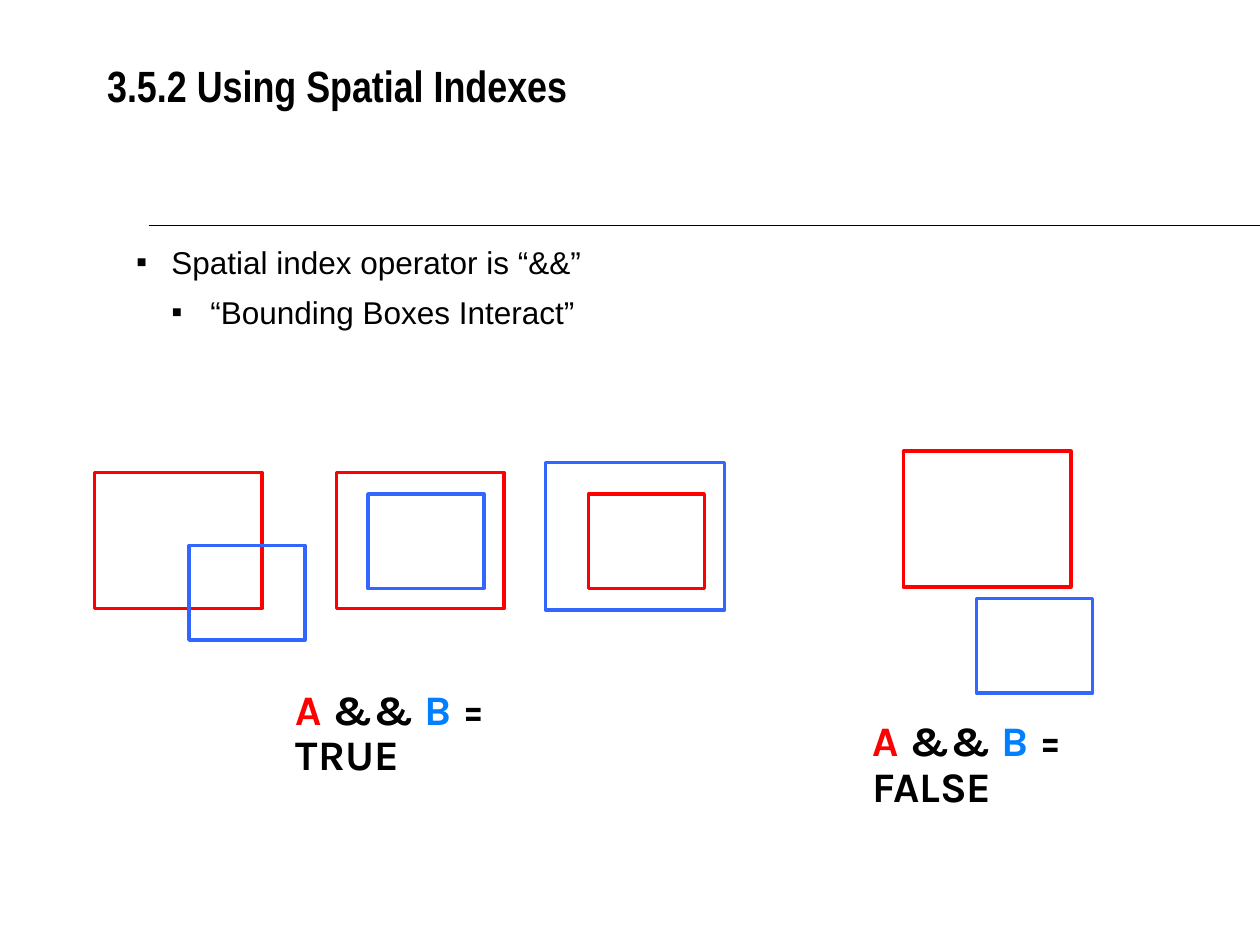
from lxml.etree import SubElement as Sub
from pptx import Presentation as Deck
from pptx.dml.color import RGBColor as Rgb
from pptx.enum.shapes import MSO_CONNECTOR as Conn, MSO_SHAPE as Kind
from pptx.enum.text import MSO_ANCHOR as Anchor, MSO_AUTO_SIZE as Fit, PP_ALIGN as Align
from pptx.oxml.ns import qn
from pptx.util import Inches, Pt

BLACK = Rgb(0, 0, 0)
RED = Rgb(0xFF, 0, 0)
BLUE = Rgb(0x33, 0x66, 0xFF)
SKY = Rgb(0, 0x80, 0xFF)

HEAD = {"name": "Arial Narrow", "size": Pt(25), "bold": True}
BODY = {"name": "Arial", "size": Pt(18), "bold": False}
LABEL = {"name": "Karla", "size": Pt(24), "bold": True}
FRAME = {"word_wrap": True, "auto_size": Fit.NONE, "vertical_anchor": Anchor.TOP}

BIG = (1.33, 1.08)
SMALL = (0.92, 0.75)
OUTER = (1.42, 1.17)


def apply(item, look):
    for key, value in look.items():
        setattr(item, key, value)


def place(shape, box):
    names = ("left", "top", "width", "height")
    apply(shape, dict(zip(names, map(Inches, box))))


def write(para, text, look, color=BLACK):
    run = para.add_run()
    run.text = text
    apply(run.font, look)
    run.font.color.rgb = color


def add_title(slide, box, text):
    title = slide.shapes.title
    place(title, box)
    apply(title.text_frame, FRAME)
    para = title.text_frame.paragraphs[0]
    para.alignment = Align.LEFT
    write(para, text, HEAD)


def add_rule(slide, box):
    left, top, width = box
    rule = slide.shapes.add_connector(
        Conn.STRAIGHT, Inches(left), Inches(top), Inches(left + width), Inches(top))
    rule.line.color.rgb = BLACK
    rule.line.width = Pt(1)
    Sub(rule._element.spPr, qn("a:effectLst"))


def add_list(slide, box, items):
    body = slide.placeholders[1]
    place(body, box)
    frame = body.text_frame
    apply(frame, FRAME | {"margin_left": 0})
    for level, (text, margin, hang) in enumerate(items):
        para = frame.add_paragraph() if level else frame.paragraphs[0]
        props = para._p.get_or_add_pPr()
        props.set("marL", str(Inches(margin)))
        props.set("indent", str(Inches(-hang)))
        Sub(props, qn("a:buFont"), typeface="Arial")
        Sub(props, qn("a:buChar"), char="▪")
        apply(para, {"level": level, "line_spacing": Pt(25),
                     "space_before": Pt(3.6 if level else 0),
                     "alignment": Align.LEFT})
        write(para, text, BODY)


def add_pair(slide, left, top, parts):
    for color, (x, y), size in parts:
        rect = slide.shapes.add_shape(Kind.RECTANGLE, 0, 0, 0, 0)
        place(rect, (left + x, top + y, *size))
        rect.shadow.inherit = False
        rect.fill.background()
        rect.line.color.rgb = color
        rect.line.width = Pt(2)


def add_label(slide, box, result):
    label = slide.shapes.add_textbox(*map(Inches, box))
    apply(label.text_frame, FRAME)
    para = label.text_frame.paragraphs[0]
    para.line_spacing = 0.9
    parts = (("A", RED), (" && ", BLACK), ("B", SKY), (f" = {result}", BLACK))
    for text, color in parts:
        write(para, text, LABEL, color)


def main():
    deck = Deck()
    deck.slide_width, deck.slide_height = Inches(10), Inches(7.5)
    slide = deck.slides.add_slide(deck.slide_layouts[1])
    add_rule(slide, (1.18, 1.79, 8.82))
    add_title(slide, (0.75, 0.42, 8.5, 1.08), "3.5.2 Using Spatial Indexes")
    add_list(slide, (1.08, 1.83, 8.17, 1.83), (
        ("Spatial index operator is “&&”", 0.28, 0.28),
        ("“Bounding Boxes Interact”", 0.59, 0.31)))
    pairs = (
        (2.67, 3.75, ((RED, (0, 0), BIG), (BLUE, (0.25, 0.17), SMALL))),
        (4.33, 3.67, ((RED, (0.34, 0.25), SMALL), (BLUE, (0, 0), OUTER))),
        (7.17, 3.58, ((RED, (0, 0), BIG), (BLUE, (0.58, 1.17), SMALL))),
        (0.75, 3.75, ((RED, (0, 0), BIG), (BLUE, (0.75, 0.58), SMALL))),
    )
    for left, top, parts in pairs:
        add_pair(slide, left, top, parts)
    add_label(slide, (2.25, 5.42, 2.5, 0.46), "TRUE")
    add_label(slide, (6.83, 5.67, 2.63, 0.46), "FALSE")
    deck.save("out.pptx")


if __name__ == "__main__":
    main()
